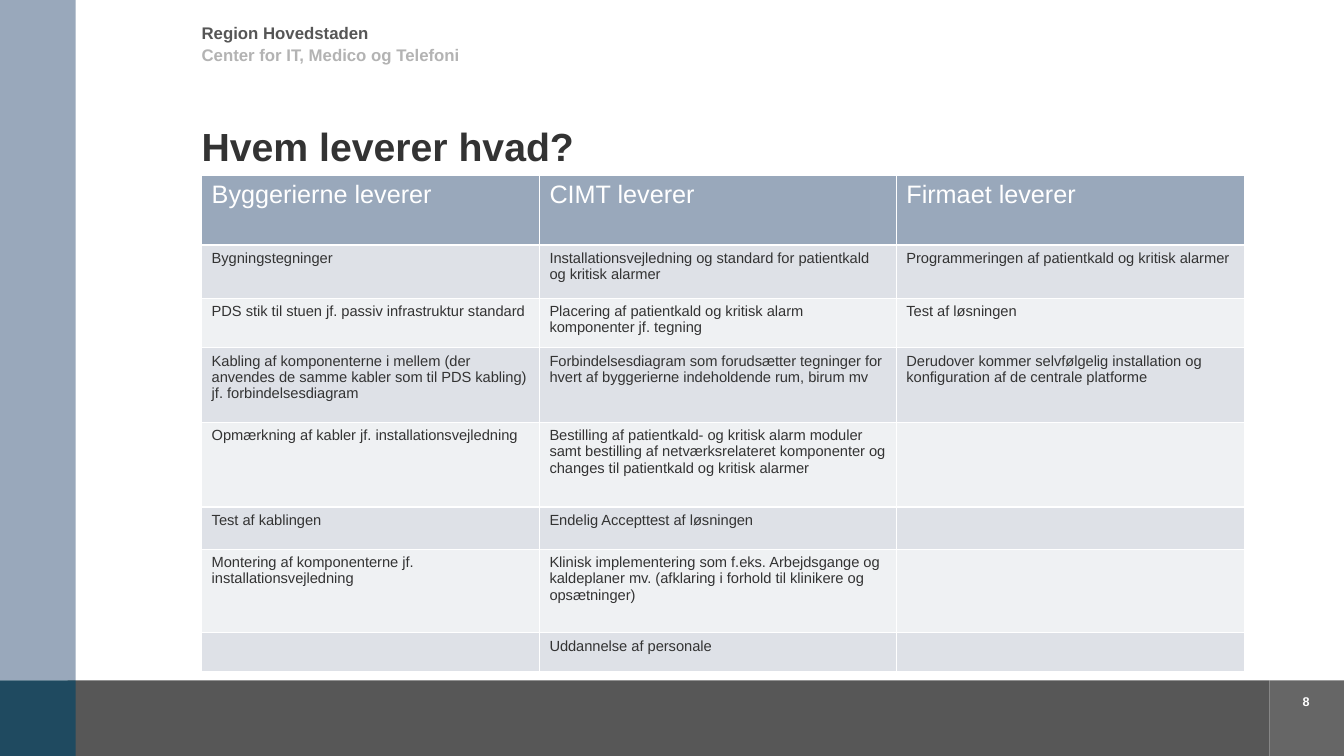
from dataclasses import dataclass

from pptx import Presentation
from pptx.dml.color import RGBColor
from pptx.enum.shapes import MSO_SHAPE
from pptx.enum.text import MSO_ANCHOR, PP_ALIGN
from pptx.util import Inches, Pt


@dataclass(frozen=True)
class Theme:
    font: str = "Arial"
    white: str = "FFFFFF"
    text: str = "333333"
    region: str = "565656"
    center: str = "B3B3B3"
    steel: str = "99A8BB"
    navy: str = "1F4A60"
    footer: str = "575757"
    number_tile: str = "666666"
    bands: tuple = ("DEE1E7", "EFF1F3")
    title_size: float = 28
    head_size: float = 18
    label_size: float = 12
    cell_size: float = 10.5
    number_size: float = 9


theme = Theme()


def style(para, size, color, bold=False):
    para.font.name = theme.font
    para.font.size = Pt(size)
    para.font.bold = bold
    para.font.color.rgb = RGBColor.from_string(color)


def fill_frame(frame, text, size, color):
    frame.margin_left = frame.margin_right = 0
    frame.margin_top = frame.margin_bottom = 0
    frame.word_wrap = True
    para = frame.paragraphs[0]
    para.text = text
    style(para, size, color, bold=True)
    return para


deck = Presentation()
deck.slide_width = Inches(13.33)
deck.slide_height = Inches(7.5)
page = deck.slides.add_slide(deck.slide_layouts[5])

# Side and footer bands
bands = [
    (0.67, 6.75, 11.92, 0.75, theme.footer),
    (12.59, 6.75, 0.75, 0.75, theme.number_tile),
    (0, 0, 0.75, 6.75, theme.steel),
    (0, 6.75, 0.75, 0.75, theme.navy),
]
for left, top, width, height, color in bands:
    band = page.shapes.add_shape(
        MSO_SHAPE.RECTANGLE, Inches(left), Inches(top), Inches(width), Inches(height))
    band.shadow.inherit = False
    band.fill.solid()
    band.fill.fore_color.rgb = RGBColor.from_string(color)
    band.line.fill.background()

# Title
title = page.shapes.title
title.left, title.top = Inches(2), Inches(1.09)
title.width, title.height = Inches(7.76), Inches(0.59)
title.text_frame.vertical_anchor = MSO_ANCHOR.BOTTOM
para = fill_frame(title.text_frame, "Hvem leverer hvad?", theme.title_size, theme.text)
para.alignment = PP_ALIGN.LEFT
para.line_spacing = 0.85

# Sender lines and page number
labels = [
    ("Region Hovedstaden", 2, 0.23, 3.41, 0.24,
     theme.label_size, theme.region, PP_ALIGN.LEFT),
    ("Center for IT, Medico og Telefoni", 2, 0.44, 10.34, 0.39,
     theme.label_size, theme.center, PP_ALIGN.LEFT),
    ("8", 12.58, 6.88, 0.75, 0.2,
     theme.number_size, theme.white, PP_ALIGN.CENTER),
]
for text, left, top, width, height, size, color, alignment in labels:
    box = page.shapes.add_textbox(Inches(left), Inches(top), Inches(width), Inches(height))
    fill_frame(box.text_frame, text, size, color).alignment = alignment

# Table of deliveries
rows = [
    (0.69, "Byggerierne leverer", "CIMT leverer", "Firmaet leverer"),
    (0.53, "Bygningstegninger",
     "Installationsvejledning og standard for patientkald og kritisk alarmer",
     "Programmeringen af patientkald og kritisk alarmer"),
    (0.49, "PDS stik til stuen jf. passiv infrastruktur standard",
     "Placering af patientkald og kritisk alarm komponenter jf. tegning",
     "Test af løsningen"),
    (0.74, "Kabling af komponenterne i mellem (der anvendes de samme kabler "
     "som til PDS kabling) jf. forbindelsesdiagram",
     "Forbindelsesdiagram som forudsætter tegninger for hvert af byggerierne "
     "indeholdende rum, birum mv",
     "Derudover kommer selvfølgelig installation og konfiguration af de centrale platforme"),
    (0.84, "Opmærkning af kabler jf. installationsvejledning",
     "Bestilling af patientkald- og kritisk alarm moduler samt bestilling af "
     "netværksrelateret komponenter og changes til patientkald og kritisk alarmer", ""),
    (0.42, "Test af kablingen", "Endelig Accepttest af løsningen", ""),
    (0.83, "Montering af komponenterne jf. installationsvejledning",
     "Klinisk implementering som f.eks. Arbejdsgange og kaldeplaner mv. "
     "(afklaring i forhold til klinikere og opsætninger)", ""),
    (0.38, "", "Uddannelse af personale", ""),
]
column_widths = (3.35, 3.54, 3.45)
table = page.shapes.add_table(
    len(rows), len(column_widths),
    Inches(2), Inches(1.74), Inches(10.34), Inches(4.92)).table
for column, width in zip(table.columns, column_widths):
    column.width = Inches(width)
for row_index, (height, *texts) in enumerate(rows):
    table.rows[row_index].height = Inches(height)
    is_head = row_index == 0
    fill = theme.steel if is_head else theme.bands[(row_index - 1) % 2]
    size = theme.head_size if is_head else theme.cell_size
    color = theme.white if is_head else theme.text
    for column_index, text in enumerate(texts):
        cell = table.cell(row_index, column_index)
        cell.fill.solid()
        cell.fill.fore_color.rgb = RGBColor.from_string(fill)
        para = cell.text_frame.paragraphs[0]
        if text:
            para.text = text
        style(para, size, color)

deck.save("out.pptx")
